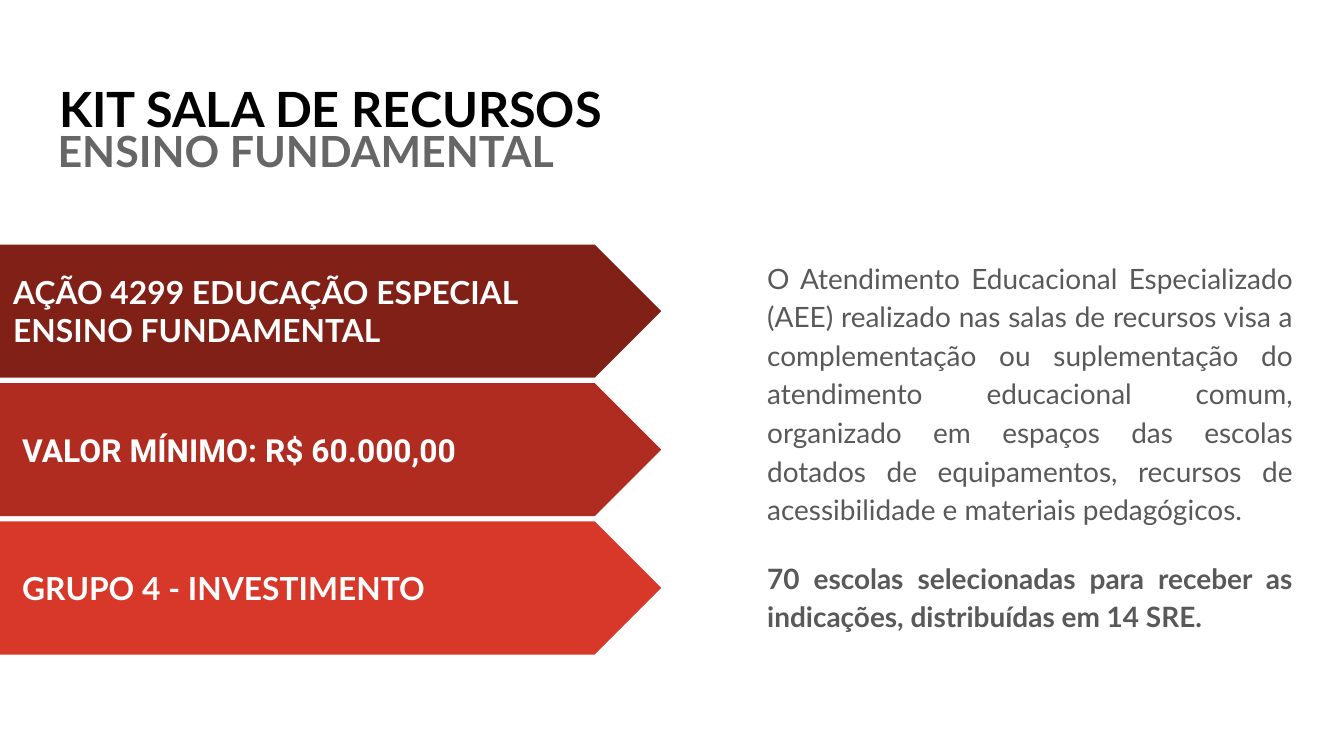
from pptx import Presentation
from pptx import util as u
from pptx.dml.color import RGBColor
from pptx.enum import shapes, text

WIDTH = 10
HEIGHT = WIDTH * 9 / 16
BLACK = RGBColor(0x00, 0x00, 0x00)
WHITE = RGBColor(0xFF, 0xFF, 0xFF)
GRAY = RGBColor(0x66, 0x66, 0x66)
BODY_GRAY = RGBColor(0x59, 0x59, 0x59)
DARK_RED = RGBColor(0x80, 0x20, 0x17)
MID_RED = RGBColor(0xB0, 0x2C, 0x20)
BRIGHT_RED = RGBColor(0xD8, 0x38, 0x29)

BANNER_TOP, BANNER_HEIGHT, BANNER_PITCH = 1.82, 0.99, 1.03
BANNER_TIP = 4.92
BLEED = 0.6  # how far a chevron's notch runs past the left edge
MARGIN = 0.1
CHEVRON_INSET = 0.27

PLATE = shapes.MSO_SHAPE.PENTAGON
CHEVRON = shapes.MSO_SHAPE.CHEVRON
BANNERS = [
    (PLATE, 0, MARGIN, DARK_RED, "Lato",
     ["AÇÃO 4299 EDUCAÇÃO ESPECIAL", "ENSINO FUNDAMENTAL"]),
    (CHEVRON, -BLEED, CHEVRON_INSET, MID_RED, "Roboto",
     ["VALOR MÍNIMO: R$ 60.000,00"]),
    (CHEVRON, -BLEED, CHEVRON_INSET, BRIGHT_RED, "Lato",
     ["GRUPO 4 - INVESTIMENTO"]),
]
DESCRIPTION = (
    "O Atendimento Educacional Especializado (AEE) realizado nas salas de "
    "recursos visa a complementação ou suplementação do atendimento "
    "educacional comum, organizado em espaços das escolas dotados de "
    "equipamentos, recursos de acessibilidade e materiais pedagógicos."
)
SELECTION = ("70 escolas selecionadas para receber as indicações, "
             "distribuídas em 14 SRE.")


def write(holder, lines, size, color, font="Lato", bold=True,
          anchor=text.MSO_ANCHOR.TOP, align=text.PP_ALIGN.LEFT, inset=MARGIN):
    """Fill a text frame with equally formatted paragraphs and return them."""
    frame = holder.text_frame
    frame.text = "\n".join(lines)
    frame.word_wrap = True
    frame.auto_size = text.MSO_AUTO_SIZE.NONE
    frame.vertical_anchor = anchor
    frame.margin_left = u.Inches(inset)
    frame.margin_right = frame.margin_top = frame.margin_bottom = u.Inches(MARGIN)
    for paragraph in frame.paragraphs:
        paragraph.alignment = align
        for run in paragraph.runs:
            run.font.name = font
            run.font.size = u.Pt(size)
            run.font.bold = bold
            run.font.color.rgb = color
    return frame.paragraphs


def add_headings(slide):
    title = slide.shapes.title
    title.left, title.top = u.Inches(0.34), u.Inches(0.49)
    title.width, title.height = u.Inches(6.38), u.Inches(0.63)
    write(title, ["KIT SALA DE RECURSOS"], 26, BLACK)
    subtitle = slide.shapes.add_textbox(
        u.Inches(0.33), u.Inches(0.83), u.Inches(7.39), u.Inches(0.63))
    write(subtitle, ["ENSINO FUNDAMENTAL"], 23, GRAY)


def add_banner(slide, row, outline, left, inset, color, font, lines):
    banner = slide.shapes.add_shape(
        outline, u.Inches(left), u.Inches(BANNER_TOP + row * BANNER_PITCH),
        u.Inches(BANNER_TIP - left), u.Inches(BANNER_HEIGHT))
    banner.adjustments[0] = 0.5
    banner.shadow.inherit = False
    banner.fill.solid()
    banner.fill.fore_color.rgb = color
    banner.line.fill.background()
    write(banner, lines, 17, WHITE, font,
          anchor=text.MSO_ANCHOR.MIDDLE, inset=inset)


def add_description(slide):
    box = slide.shapes.add_textbox(
        u.Inches(5.61), u.Inches(1.56), u.Inches(4.11), u.Inches(3.5))
    paragraphs = write(box, [DESCRIPTION, SELECTION], 15, BODY_GRAY, bold=False,
                       anchor=text.MSO_ANCHOR.MIDDLE,
                       align=text.PP_ALIGN.JUSTIFY)
    for paragraph in paragraphs:
        paragraph.line_spacing = 1.15
    selection = paragraphs[1]
    selection.space_before = selection.space_after = u.Pt(16)
    selection.runs[0].font.bold = True


def main():
    deck = Presentation()
    deck.slide_width, deck.slide_height = u.Inches(WIDTH), u.Inches(HEIGHT)
    slide = deck.slides.add_slide(deck.slide_layouts.get_by_name("Title Only"))
    add_headings(slide)
    for row, banner in enumerate(BANNERS):
        add_banner(slide, row, *banner)
    add_description(slide)
    deck.save("out.pptx")


if __name__ == "__main__":
    main()
